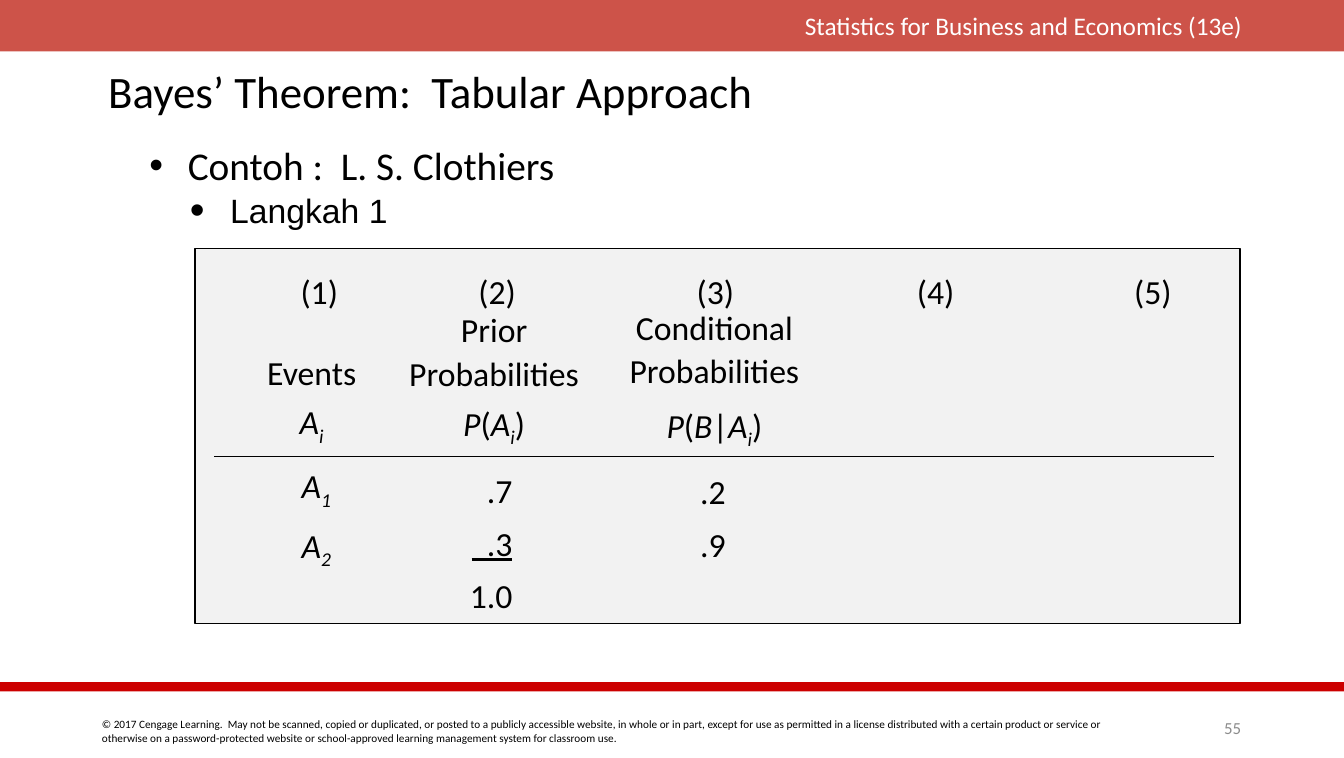
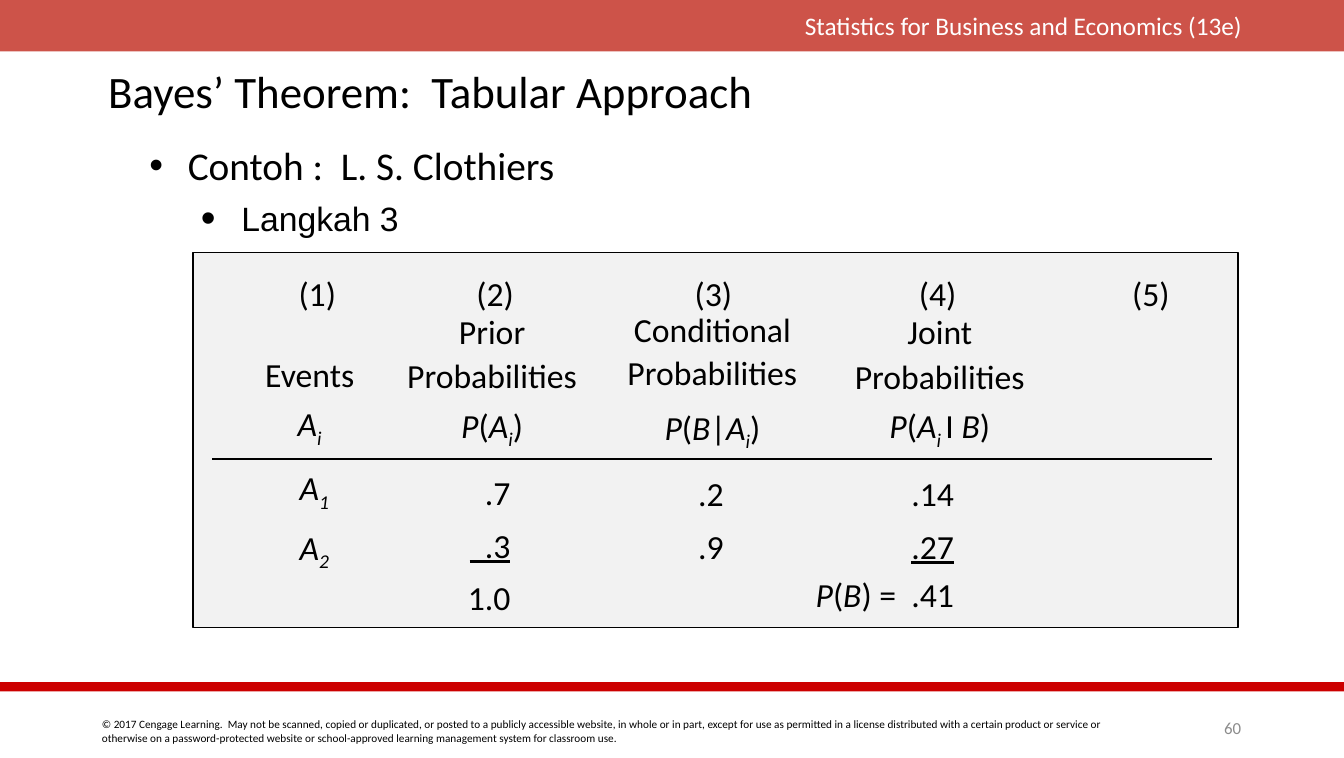
import dataclasses
import typing

import pptx
import pptx.dml.color
import pptx.enum.shapes
import pptx.enum.text
import pptx.oxml.ns
import pptx.util
from lxml import etree

Inches = pptx.util.Inches
Pt = pptx.util.Pt
Align = pptx.enum.text.PP_ALIGN
Anchor = pptx.enum.text.MSO_ANCHOR
qn = pptx.oxml.ns.qn

COLORS = {
    "band": "BF2317",
    "rule": "CC0000",
    "panel": "F2F2F2",
    "ink": "000000",
    "header": "FFFFFF",
    "page": "8C8C8C",
}
BODY_FONT = "Calibri"
SLIDE_WIDTH = 13.3
BOOK = "Statistics for Business and Economics (13e)"
COPYRIGHT = (
    "© 2017 Cengage Learning.  May not be scanned, copied or duplicated, or posted to a "
    "publicly accessible website, in whole or in part, except for use as permitted in a license "
    "distributed with a certain product or service or otherwise on a password-protected website "
    "or school-approved learning management system for classroom use."
)


class Piece(typing.NamedTuple):
    text: str
    italic: bool = False
    subscript: bool = False
    underline: bool = False


class Line(typing.NamedTuple):
    pieces: tuple[Piece, ...]
    spacing: float = 1.0
    before: float = 0


class Box(typing.NamedTuple):
    left: float
    top: float
    width: float
    height: float


@dataclasses.dataclass(frozen=True)
class Style:
    size: float = 24
    color: str = "ink"
    font: str = BODY_FONT
    align: Align = Align.LEFT
    anchor: Anchor = Anchor.TOP


@dataclasses.dataclass(frozen=True)
class Cell:
    """A block of table text, placed in the coordinates of the first step."""
    box: Box
    lines: tuple[Line, ...]
    align: Align = Align.CENTER


@dataclasses.dataclass(frozen=True)
class Step:
    page: str
    label: str
    label_at: tuple[float, float]
    panel_at: tuple[float, float]
    shift: float
    joint_center: float
    cells: tuple[Cell, ...]


def line(text: str, spacing: float = 1.0, before: float = 0, underline: bool = False) -> Line:
    return Line((Piece(text, underline=underline),), spacing, before)


def event(index: str) -> tuple[Piece, Piece]:
    return Piece("A", italic=True), Piece(index, italic=True, subscript=True)


def probability(*inner: Piece) -> tuple[Piece, ...]:
    return (Piece("P", italic=True), Piece("("), *inner, Piece(")"))


GIVEN_CELLS = (
    Cell(Box(2.38, 3.41, 1.41, 1), (line("Events", 1.2), Line(event("i"), 1.2))),
    Cell(Box(3.67, 3.05, 2.44, 1.35), (
        line("Prior", 1.1),
        line("Probabilities", 1.1),
        Line(probability(*event("i")), 1.2),
    )),
    Cell(Box(5.77, 3.07, 2.6, 1.4), (
        line("Conditional", 0.9),
        line("Probabilities", 0.9, before=4.8),
        Line(probability(Piece("B", italic=True), Piece("|"), *event("i")), 1.3),
    )),
    Cell(Box(2.63, 4.42, 1, 1.27), tuple(Line(event(index), 1.3) for index in "12")),
    Cell(Box(4.37, 4.6, 0.8, 1.42), (
        line(".7", 1.3),
        line("  .3", 1.3, underline=True),
        line("1.0", 1.3),
    ), Align.RIGHT),
    Cell(Box(6.72, 4.37, 0.67, 1.38), (line(".2", 1.3), line(".9", 1.3))),
)
JOINT_CELLS = (
    Cell(Box(8.02, 3, 2.6, 1.46), (
        line("Joint", 1.1),
        line("Probabilities", 1.1),
        Line(probability(
            Piece("A", italic=True),
            Piece("i ", italic=True, subscript=True),
            Piece("I "),
            Piece("B", italic=True),
        ), 1.2),
    )),
    Cell(Box(8.94, 4.32, 2, 1.48), (
        line(".14", 1.3),
        line(".27", 1.3, underline=True),
    ), Align.LEFT),
    Cell(Box(7.56, 5.53, 2, 0.65), (
        Line((*probability(Piece("B", italic=True)), Piece(" =  .41"))),
    ), Align.RIGHT),
)
STEPS = (
    Step("55", "Langkah 1", (1.28, 1.83), (1.93, 2.46), 0, 9.26, GIVEN_CELLS),
    Step("60", "Langkah 3", (1.39, 1.91), (1.91, 2.5), 0.02, 9.3, GIVEN_CELLS + JOINT_CELLS),
)


def rgb(name: str) -> pptx.dml.color.RGBColor:
    return pptx.dml.color.RGBColor.from_string(COLORS[name])


def inches(box: Box) -> tuple[pptx.util.Length, ...]:
    return tuple(Inches(value) for value in box)


def write(frame, lines: tuple[Line, ...], style: Style) -> None:
    frame.word_wrap = True
    frame.auto_size = pptx.enum.text.MSO_AUTO_SIZE.NONE
    frame.vertical_anchor = style.anchor
    for number, content in enumerate(lines):
        paragraph = frame.add_paragraph() if number else frame.paragraphs[0]
        paragraph.alignment = style.align
        paragraph.line_spacing = content.spacing
        paragraph.space_before = Pt(content.before)
        for piece in content.pieces:
            run = paragraph.add_run()
            run.text = piece.text
            run.font.name = style.font
            run.font.size = Pt(style.size)
            run.font.color.rgb = rgb(style.color)
            run.font.italic = piece.italic
            run.font.underline = piece.underline
            if piece.subscript:
                run.font._element.set("baseline", "-25000")


def add_text(shapes, box: Box, lines: tuple[Line, ...], style: Style):
    frame = shapes.add_textbox(*inches(box)).text_frame
    write(frame, lines, style)
    return frame


def add_bullet(shapes, box: Box, text: str, style: Style, margin: float, hang: float,
               bullet_percent: int = 100) -> None:
    frame = add_text(shapes, box, (line(text),), style)
    properties = frame.paragraphs[0]._p.get_or_add_pPr()
    properties.set("marL", str(Inches(margin)))
    properties.set("indent", str(-Inches(hang)))
    etree.SubElement(properties, qn("a:buSzPct"), val=str(bullet_percent * 1000))
    etree.SubElement(properties, qn("a:buFont"), typeface="Arial")
    etree.SubElement(properties, qn("a:buChar"), char="•")


def add_rectangle(shapes, box: Box, color: str, outlined: bool = False):
    rectangle = shapes.add_shape(pptx.enum.shapes.MSO_SHAPE.RECTANGLE, *inches(box))
    rectangle.shadow.inherit = False
    rectangle.fill.solid()
    rectangle.fill.fore_color.rgb = rgb(color)
    if outlined:
        rectangle.line.color.rgb = rgb("ink")
        rectangle.line.width = Pt(1)
    else:
        rectangle.line.fill.background()
    return rectangle


def add_frame(slide, page: str) -> None:
    """Draw the header band, footer rule, copyright line and page number."""
    shapes = slide.shapes
    band = add_rectangle(shapes, Box(0, 0, SLIDE_WIDTH, 0.51), "band")
    band_color = band._element.spPr.find(qn("a:solidFill")).find(qn("a:srgbClr"))
    etree.SubElement(band_color, qn("a:alpha"), val="78000")
    add_rectangle(shapes, Box(0, 6.75, SLIDE_WIDTH, 0.09), "rule")
    add_text(shapes, Box(0.91, 7.05, 10.3, 0.37), (line(COPYRIGHT),), Style(8))
    add_text(shapes, Box(6.81, 0.05, 5.58, 0.4), (line(BOOK),),
             Style(18, "header", align=Align.RIGHT))
    add_text(shapes, Box(11.7, 7.05, 0.68, 0.3), (line(page),),
             Style(12, "page", align=Align.RIGHT, anchor=Anchor.MIDDLE))


def add_title(slide) -> None:
    title = slide.shapes.title
    title.left, title.top, title.width, title.height = inches(Box(0.97, 0.53, 11.47, 0.8))
    write(title.text_frame, (line("Bayes’ Theorem:  Tabular Approach", 0.9),),
          Style(32, anchor=Anchor.MIDDLE))


def add_probability_table(slide, step: Step) -> None:
    shapes = slide.shapes.add_group_shape().shapes
    add_rectangle(shapes, Box(*step.panel_at, 10.34, 3.71), "panel", outlined=True)

    rule_y = Inches(4.52 + step.shift)
    rule = shapes.add_connector(
        pptx.enum.shapes.MSO_CONNECTOR.STRAIGHT,
        Inches(2.12 - step.shift), rule_y, Inches(12.01 - step.shift), rule_y,
    )
    rule.line.color.rgb = rgb("ink")
    rule.line.width = Pt(1)
    etree.SubElement(rule._element.spPr, qn("a:effectLst"))

    centers = (3.16, 4.92, 7.08, step.joint_center, 11.41)
    numbers = tuple(
        Cell(Box(center - 0.3, 2.65, 0.6, 0.46), (line(f"({number})"),))
        for number, center in enumerate(centers, 1)
    )
    for cell in numbers + step.cells:
        box = cell.box._replace(left=cell.box.left - step.shift, top=cell.box.top + step.shift)
        add_text(shapes, box, cell.lines, Style(align=cell.align, anchor=Anchor.MIDDLE))


def add_step(deck, step: Step) -> None:
    slide = deck.slides.add_slide(deck.slide_layouts.get_by_name("Title Only"))
    add_frame(slide, step.page)
    add_title(slide)
    add_bullet(slide.shapes, Box(1.38, 1.35, 8.51, 0.53), "Contoh :  L. S. Clothiers",
               Style(28), 0.38, 0.38)
    add_bullet(slide.shapes, Box(*step.label_at, 7.11, 0.58), step.label,
               Style(font="Arial"), 0.9, 0.4, 125)
    add_probability_table(slide, step)


def main() -> None:
    deck = pptx.Presentation()
    deck.slide_width = Inches(SLIDE_WIDTH)
    deck.slide_height = Inches(7.5)
    for step in STEPS:
        add_step(deck, step)
    deck.save("out.pptx")


if __name__ == "__main__":
    main()
